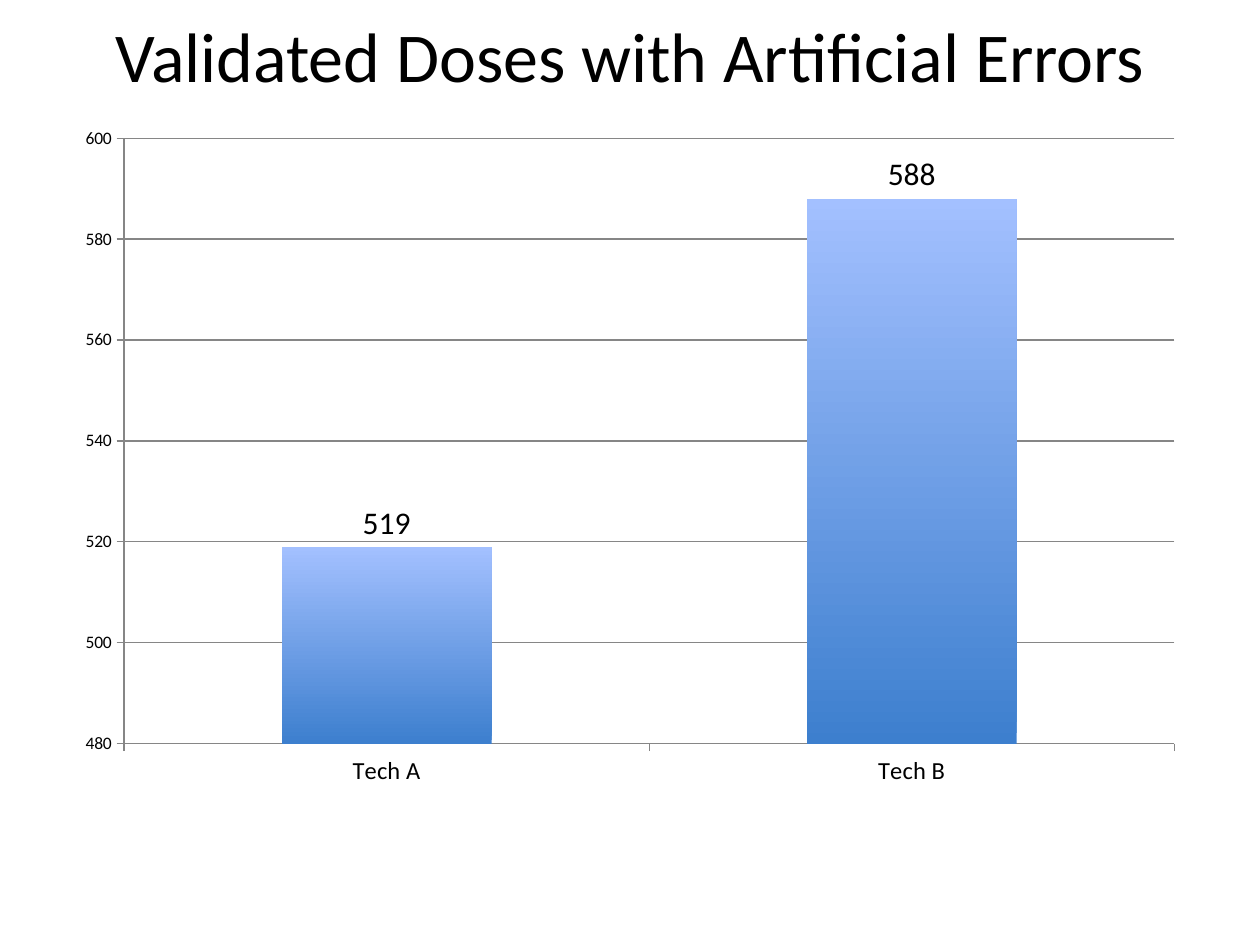
import pptx
import pptx.chart.data
import pptx.dml.color
import pptx.enum.chart
import pptx.enum.text
import pptx.util

Pt = pptx.util.Pt
COLOURS = {"text": "000000", "axis": "868686", "bar_bottom": "3D7FCE", "bar_top": "A3C0FF"}


def colour(name):
    """Return the named colour as an RGB value."""
    return pptx.dml.color.RGBColor.from_string(COLOURS[name])


def set_values(target, values):
    """Set each attribute of the target from a dict."""
    for name, value in values.items():
        setattr(target, name, value)


def style_font(font, size):
    """Give a font the typeface, size and colour of the slide."""
    set_values(font, {"name": "Calibri", "size": Pt(size)})
    font.color.rgb = colour("text")


def style_line(line):
    """Draw a chart line thin and grey."""
    line.color.rgb = colour("axis")
    line.width = Pt(0.75)


def add_title(slide, text):
    """Add the centred slide title."""
    shape = slide.shapes.add_textbox(Pt(36), Pt(0.75), Pt(648), Pt(61.25))
    frame = shape.text_frame
    set_values(frame, {"word_wrap": True, "vertical_anchor": pptx.enum.text.MSO_ANCHOR.MIDDLE})
    paragraph = frame.paragraphs[0]
    set_values(paragraph, {"text": text, "alignment": pptx.enum.text.PP_ALIGN.CENTER})
    style_font(paragraph.runs[0].font, 40)


def style_axis(axis, size):
    """Style an axis with outside ticks and grey lines."""
    set_values(axis, {
        "major_tick_mark": pptx.enum.chart.XL_TICK_MARK.OUTSIDE,
        "minor_tick_mark": pptx.enum.chart.XL_TICK_MARK.NONE,
    })
    style_font(axis.tick_labels.font, size)
    style_line(axis.format.line)


def style_bars(plot):
    """Give the bars a vertical gradient and value labels."""
    set_values(plot, {"gap_width": 150, "vary_by_categories": False})
    series = plot.series[0]
    fill = series.format.fill
    fill.gradient()
    fill.gradient_angle = 90
    for stop, name in zip(fill.gradient_stops, ("bar_bottom", "bar_top")):
        stop.color.rgb = colour(name)
    labels = series.data_labels
    set_values(labels, {
        "show_value": True,
        "position": pptx.enum.chart.XL_LABEL_POSITION.OUTSIDE_END,
    })
    style_font(labels.font, 18)


def add_dose_chart(slide, doses):
    """Add the column chart of validated doses."""
    data = pptx.chart.data.CategoryChartData()
    data.categories = list(doses)
    data.add_series("Series 1", list(doses.values()))
    chart = slide.shapes.add_chart(
        pptx.enum.chart.XL_CHART_TYPE.COLUMN_CLUSTERED,
        Pt(36), Pt(65.5), Pt(648), Pt(391.7), data,
    ).chart
    set_values(chart, {"has_legend": False, "has_title": False})
    style_font(chart.font, 10)
    style_axis(chart.category_axis, 14)
    style_axis(chart.value_axis, 10)
    set_values(chart.value_axis, {
        "minimum_scale": 480, "maximum_scale": 600, "major_unit": 20,
        "has_major_gridlines": True,
    })
    style_line(chart.value_axis.major_gridlines.format.line)
    style_bars(chart.plots[0])


def main():
    """Build and save the slide."""
    presentation = pptx.Presentation()
    set_values(presentation, {"slide_width": Pt(720), "slide_height": Pt(540)})
    slide = presentation.slides.add_slide(presentation.slide_layouts[6])
    add_title(slide, "Validated Doses with Artificial Errors")
    add_dose_chart(slide, {"Tech A": 519, "Tech B": 588})
    presentation.save("out.pptx")


if __name__ == "__main__":
    main()
